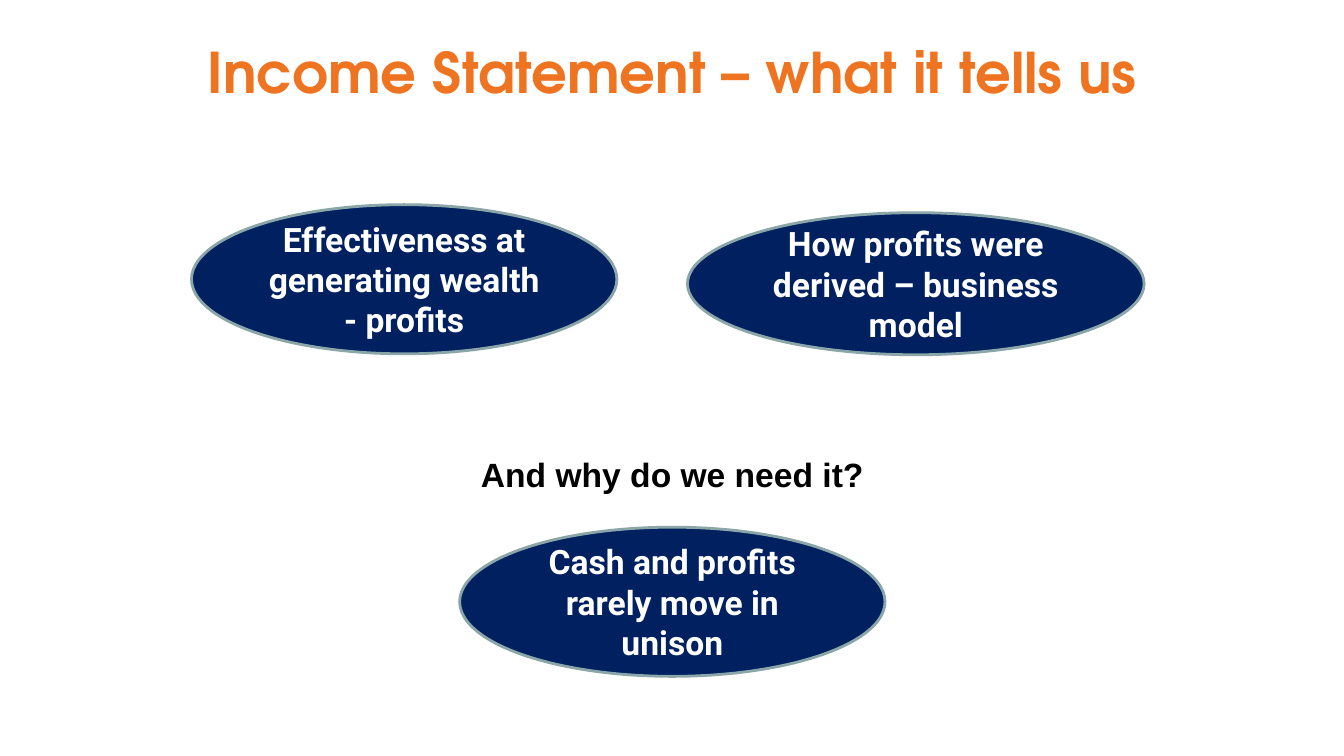
"""Build the slide on what an income statement tells us."""
import pptx
import pptx.dml.color
import pptx.enum.shapes
import pptx.enum.text
import pptx.util

COLOURS = {"heading": "EE7421", "bubble": "002060", "rim": "8AA6A8",
           "light": "FFFFFF", "dark": "000000"}


def colour(name):
    return pptx.dml.color.RGBColor.from_string(COLOURS[name])


def write(frame, text, *, font, size, ink, middle=True, inset=None,
          fit=pptx.enum.text.MSO_AUTO_SIZE.NONE):
    frame.word_wrap = True
    frame.auto_size = fit
    anchors = pptx.enum.text.MSO_ANCHOR
    frame.vertical_anchor = anchors.MIDDLE if middle else anchors.TOP
    if inset is not None:
        frame.margin_left = frame.margin_right = inset
        frame.margin_top = frame.margin_bottom = inset
    paragraph = frame.paragraphs[0]
    paragraph.alignment = pptx.enum.text.PP_ALIGN.CENTER
    run = paragraph.add_run()
    run.text = text
    run.font.name = font
    run.font.size = pptx.util.Pt(size)
    run.font.bold = True
    run.font.color.rgb = colour(ink)


class StatementSlide:
    """Hold the style and current slide; boxes are percentages of its size."""

    heading_font = "TeX Gyre Adventor"
    bubble_font = "Roboto"
    question_font = "Arial"
    heading_size = 40
    text_size = 24

    def __init__(self, deck):
        self.width, self.height = deck.slide_width, deck.slide_height
        self.slide = deck.slides.add_slide(deck.slide_layouts[5])

    def place(self, left, top, width, height):
        return (round(self.width * left / 100), round(self.height * top / 100),
                round(self.width * width / 100), round(self.height * height / 100))

    def title(self, text, box):
        heading = self.slide.shapes.title
        heading.left, heading.top, heading.width, heading.height = self.place(*box)
        write(heading.text_frame, text, font=self.heading_font,
              size=self.heading_size, ink="heading", inset=0)

    def bubble(self, text, box):
        ellipse = self.slide.shapes.add_shape(
            pptx.enum.shapes.MSO_SHAPE.OVAL, *self.place(*box))
        ellipse.shadow.inherit = False
        ellipse.fill.solid()
        ellipse.fill.fore_color.rgb = colour("bubble")
        ellipse.line.color.rgb = colour("rim")
        ellipse.line.width = pptx.util.Pt(2)
        write(ellipse.text_frame, text, font=self.bubble_font,
              size=self.text_size, ink="light")

    def question(self, text, box):
        prompt = self.slide.shapes.add_textbox(*self.place(*box))
        write(prompt.text_frame, text, font=self.question_font,
              size=self.text_size, ink="dark", middle=False,
              fit=pptx.enum.text.MSO_AUTO_SIZE.SHAPE_TO_FIT_TEXT)


def main():
    deck = pptx.Presentation()
    deck.slide_width = pptx.util.Inches(13.33)
    deck.slide_height = pptx.util.Inches(7.5)
    statement = StatementSlide(deck)
    bubble_size = (31.65, 19.73)
    statement.title("Income Statement – what it tells us", (12.5, 0, 75, 18.93))
    statement.bubble("Effectiveness at generating wealth - profits",
                     (14.25, 27.07, *bubble_size))
    statement.bubble("How profits were derived – business model",
                     (51.15, 28.13, 33.98, 18.8))
    statement.question("And why do we need it?", (28.05, 59.33, 43.95, 6.67))
    statement.bubble("Cash and profits rarely move in unison",
                     (34.2, 69.73, *bubble_size))
    deck.save("out.pptx")


if __name__ == "__main__":
    main()
